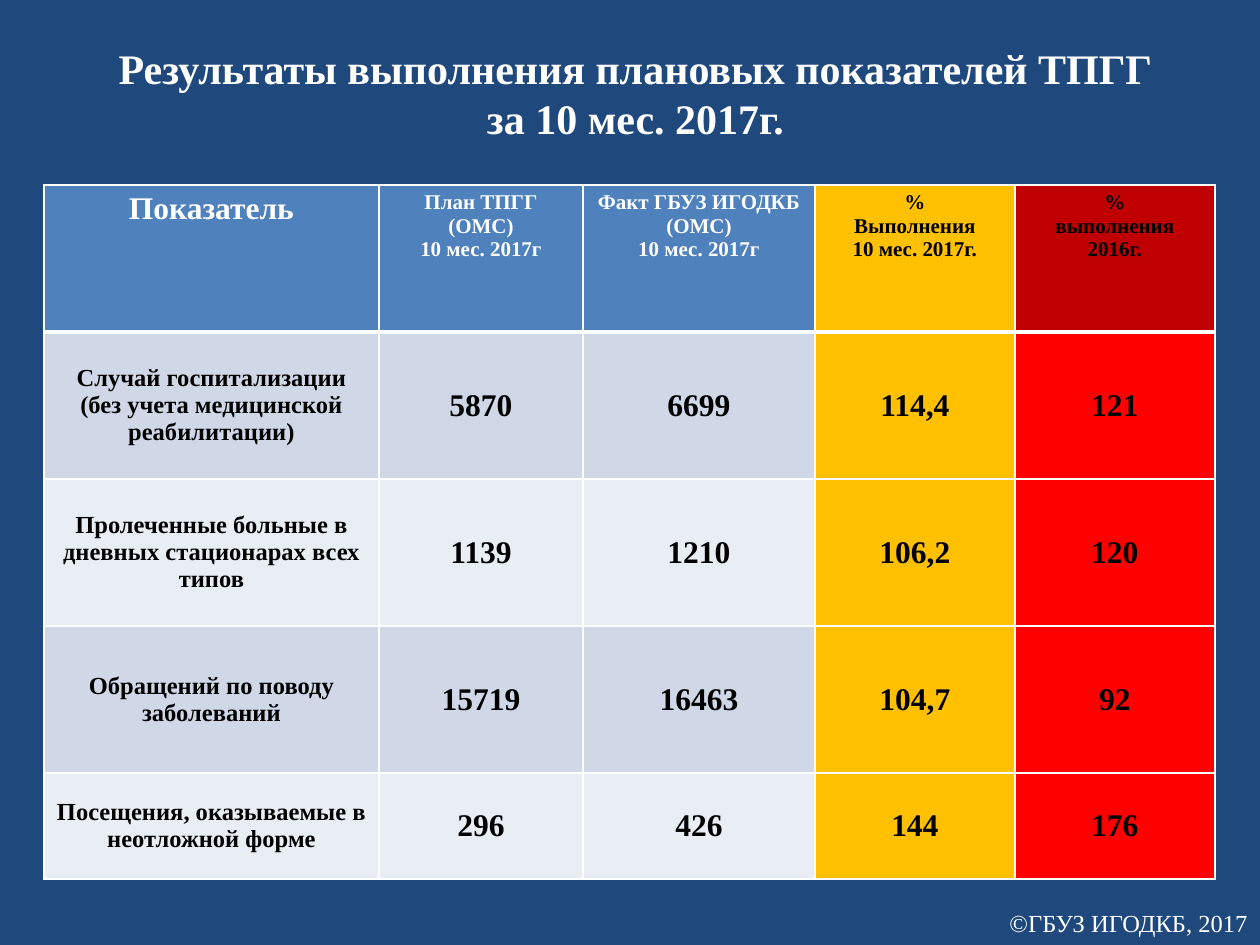
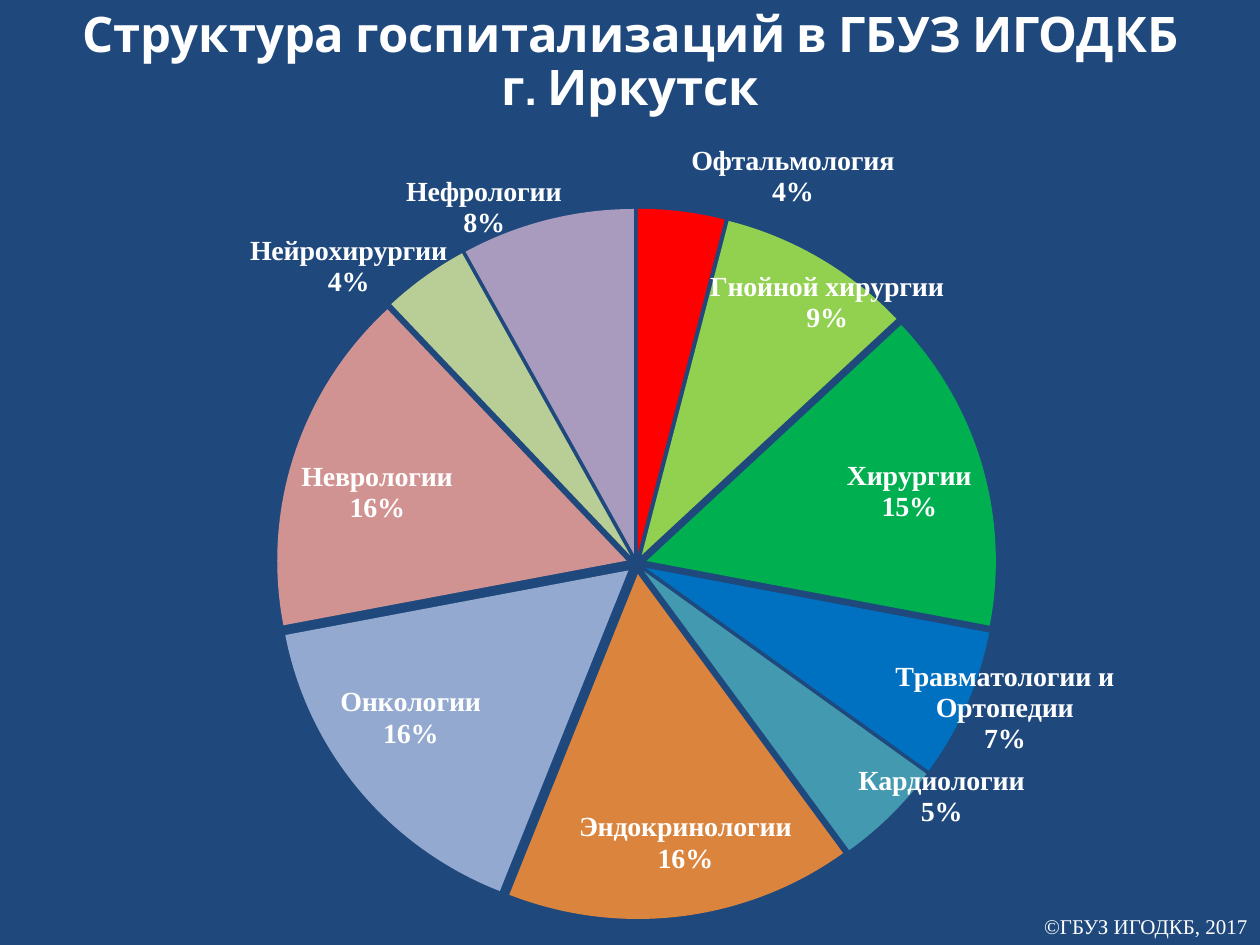
from lxml import etree
from pptx import Presentation
from pptx.chart.data import CategoryChartData
from pptx.dml.color import RGBColor
from pptx.enum.chart import XL_CHART_TYPE, XL_LABEL_POSITION
from pptx.enum.text import MSO_ANCHOR, MSO_AUTO_SIZE, PP_ALIGN
from pptx.oxml import parse_xml
from pptx.oxml.ns import nsdecls, qn
from pptx.util import Emu, Pt

PIE = XL_CHART_TYPE.PIE
FIT, OUT = XL_LABEL_POSITION.BEST_FIT, XL_LABEL_POSITION.OUTSIDE_END
TOP, MID = MSO_ANCHOR.TOP, MSO_ANCHOR.MIDDLE
NO_FIT = MSO_AUTO_SIZE.NONE
CENTER, RIGHT = PP_ALIGN.CENTER, PP_ALIGN.RIGHT
SCALE = 914400 / 126
WIDE, HIGH = 1260, 945
SERIF, SANS = "Times New Roman", "Cabin"

COLORS = {
    "back": "1F497D", "white": "FFFFFF", "black": "000000",
    "head": "4F81BD", "odd": "D0D8E8", "even": "E9EDF4",
    "gold": "FFC000", "dark": "C00000", "red": "FF0000",
    "lime": "92D050", "green": "00B050", "blue": "0070C0",
    "teal": "4399B0", "orange": "DB843D", "sky": "93A9CF",
    "rose": "D19392", "sage": "B9CD96", "lilac": "A99BBD",
}

# Table content
COLS = [335, 204, 232, 200, 200]
ROWS = [147, 147, 147, 147, 106]
PLAN = [
    ["Показатель", "План ТПГГ (ОМС)\n10 мес. 2017г",
     "Факт ГБУЗ ИГОДКБ\n(ОМС)\n10 мес. 2017г",
     "%\nВыполнения\n10 мес. 2017г.", "%\nвыполнения\n2016г."],
    ["Случай госпитализации (без учета медицинской реабилитации)",
     "5870", "6699", "114,4", "121"],
    ["Пролеченные больные в дневных стационарах всех типов",
     "1139", "1210", "106,2", "120"],
    ["Обращений по поводу заболеваний", "15719", "16463", "104,7", "92"],
    ["Посещения, оказываемые в неотложной форме",
     "296", "426", "144", "176"],
]

# Chart content: ward, percent, colour, label shift from the outer edge
WARDS = [
    ("Офтальмология", 4, "red", (9, 4)),
    ("Гнойной хирургии", 9, "lime", (-113, 83)),
    ("Хирургии", 15, "green", None),
    ("Травматологии и Ортопедии", 7, "blue", (-78, -47)),
    ("Кардиологии", 5, "teal", (-38, -55)),
    ("Эндокринологии", 16, "orange", None),
    ("Онкологии", 16, "sky", None),
    ("Неврологии", 16, "rose", None),
    ("Нейрохирургии", 4, "sage", (26, 28)),
    ("Нефрологии", 8, "lilac", (17, 27)),
]


def px(num):
    return Emu(round(num * SCALE))


def color(name):
    return RGBColor.from_string(COLORS[name])


def layout(inner):
    return parse_xml(f"<c:layout {nsdecls('c')}><c:manualLayout>{inner}"
                     "</c:manualLayout></c:layout>")


class Deck:
    def __init__(self):
        self.prs = Presentation()
        self.prs.slide_width, self.prs.slide_height = px(WIDE), px(HIGH)
        self.slide = None

    def style(self, font, size, tint="white", bold=True, face=SERIF):
        font.name, font.size, font.bold = face, Pt(size), bold
        font.color.rgb = color(tint)

    def start(self, text, box, size, face, gap=1.0):
        """Add a slide with its background and title."""
        self.slide = self.prs.slides.add_slide(self.prs.slide_layouts[5])
        fill = self.slide.background.fill
        fill.solid()
        fill.fore_color.rgb = color("back")
        title = self.slide.shapes.title
        title.left, title.top, title.width, title.height = map(px, box)
        frame = title.text_frame
        frame.text = text
        frame.auto_size = NO_FIT
        frame.vertical_anchor = MID
        para = frame.paragraphs[0]
        para.alignment, para.line_spacing = CENTER, gap
        self.style(para.font, size, face=face)

    def footer(self, top, size):
        box = self.slide.shapes.add_textbox(
            px(953), px(top), px(WIDE - 953), px(HIGH - top))
        frame = box.text_frame
        frame.word_wrap = True
        frame.text = "©ГБУЗ ИГОДКБ, 2017"
        para = frame.paragraphs[0]
        para.alignment = RIGHT
        self.style(para.font, size, bold=False)

    def cell(self, cell, text, fill, tint, size, anchor, edges):
        cell.text = text
        cell.vertical_anchor = anchor
        for para in cell.text_frame.paragraphs:
            para.alignment = CENTER
            self.style(para.font, size, tint)
        cell.fill.solid()
        cell.fill.fore_color.rgb = color(fill)
        props = cell._tc.get_or_add_tcPr()
        for spot, (side, width) in enumerate(edges.items()):
            props.insert(spot, parse_xml(
                f'<a:ln{side} {nsdecls("a")} w="{Pt(width)}"><a:solidFill>'
                f'<a:srgbClr val="{COLORS["white"]}"/></a:solidFill>'
                f'</a:ln{side}>'))

    def table(self, left, top, cols, rows, data):
        grid = self.slide.shapes.add_table(
            len(rows), len(cols), px(left), px(top),
            px(sum(cols)), px(sum(rows))).table
        for col, width in zip(grid.columns, cols):
            col.width = px(width)
        for r, (row, high) in enumerate(zip(data, rows)):
            grid.rows[r].height = px(high)
            head = r == 0
            base = "head" if head else "odd" if r % 2 else "even"
            fills = [base] * 3 + ["gold", "dark" if head else "red"]
            edges = {"L": 1, "R": 1, "T": 3 if r == 1 else 1,
                     "B": 3 if head else 1}
            for c, text in enumerate(row):
                tint = "white" if head and c < 3 else "black"
                if head:
                    size = 12 if c else 18
                else:
                    size = 18 if c else 14
                self.cell(grid.cell(r, c), text, fills[c], tint, size,
                          TOP if head else MID, edges)

    def show(self, node):
        """Make labels show category and percent on separate lines."""
        for tag, val in (("Val", 0), ("CatName", 1), ("Percent", 1)):
            node.find(qn(f"c:show{tag}")).set("val", str(val))
        mark = etree.Element(qn("c:separator"))
        mark.text = "\n"
        node.find(qn("c:showBubbleSize")).addnext(mark)

    def pie(self, left, top, wide, high, wards):
        data = CategoryChartData()
        data.categories = [ward[0] for ward in wards]
        data.add_series("Series 1", [ward[1] for ward in wards])
        chart = self.slide.shapes.add_chart(
            PIE, px(left), px(top), px(wide), px(high), data).chart
        chart.has_title = chart.has_legend = False
        self.style(chart.font, 18, bold=False, face=SANS)
        plot = chart.plots[0]
        plot.vary_by_categories = True
        series = plot.series[0]

        # Slices and their labels
        labels = series.data_labels
        labels.position = FIT
        self.style(labels.font, 16)
        for spot, (_, _, tint, shift) in enumerate(wards):
            point = series.points[spot]
            point.format.fill.solid()
            point.format.fill.fore_color.rgb = color(tint)
            point.format.line.fill.background()
            if shift:
                label = point.data_label
                label.position = OUT
                self.style(label.font, 16)
        root = labels._element
        self.show(root)
        lead = root.find(qn("c:showLeaderLines"))
        if lead is not None:
            lead.set("val", "0")
        shifts = [ward[3] for ward in wards if ward[3]]
        for node, (x, y) in zip(root.findall(qn("c:dLbl")), shifts):
            self.show(node)
            node.insert(1, layout(f'<c:x val="{x / wide:.3f}"/>'
                                  f'<c:y val="{y / high:.3f}"/>'))

        # Gap between slices
        for node in series._element.findall(qn("c:dPt")):
            burst = node.find(qn("c:explosion"))
            if burst is None:
                burst = etree.Element(qn("c:explosion"))
                node.find(qn("c:spPr")).addprevious(burst)
            burst.set("val", "3")

        # Plot area
        area = chart._chartSpace.find(".//" + qn("c:plotArea"))
        old = area.find(qn("c:layout"))
        if old is not None:
            area.remove(old)
        area.insert(0, layout(
            '<c:layoutTarget val="inner"/>'
            '<c:xMode val="edge"/><c:yMode val="edge"/>'
            '<c:x val="0.02"/><c:y val="0.12"/>'
            '<c:w val="0.98"/><c:h val="0.88"/>'))


def main():
    deck = Deck()

    # Plan results
    deck.start("Результаты выполнения плановых показателей ТПГГ\v"
               "за 10 мес. 2017г.", (44, 66, 1183, 53), 24, SERIF)
    deck.table(44, 185, COLS, ROWS, PLAN)
    deck.footer(902, 14)

    # Hospital stays by ward
    deck.start("Структура госпитализаций в ГБУЗ ИГОДКБ\vг. Иркутск",
               (32, 37, 1197, 53), 28, SANS, 0.9)
    deck.pie(-6, 125, 1260, 794, WARDS)
    deck.footer(907, 12)

    deck.prs.save("out.pptx")


if __name__ == "__main__":
    main()
